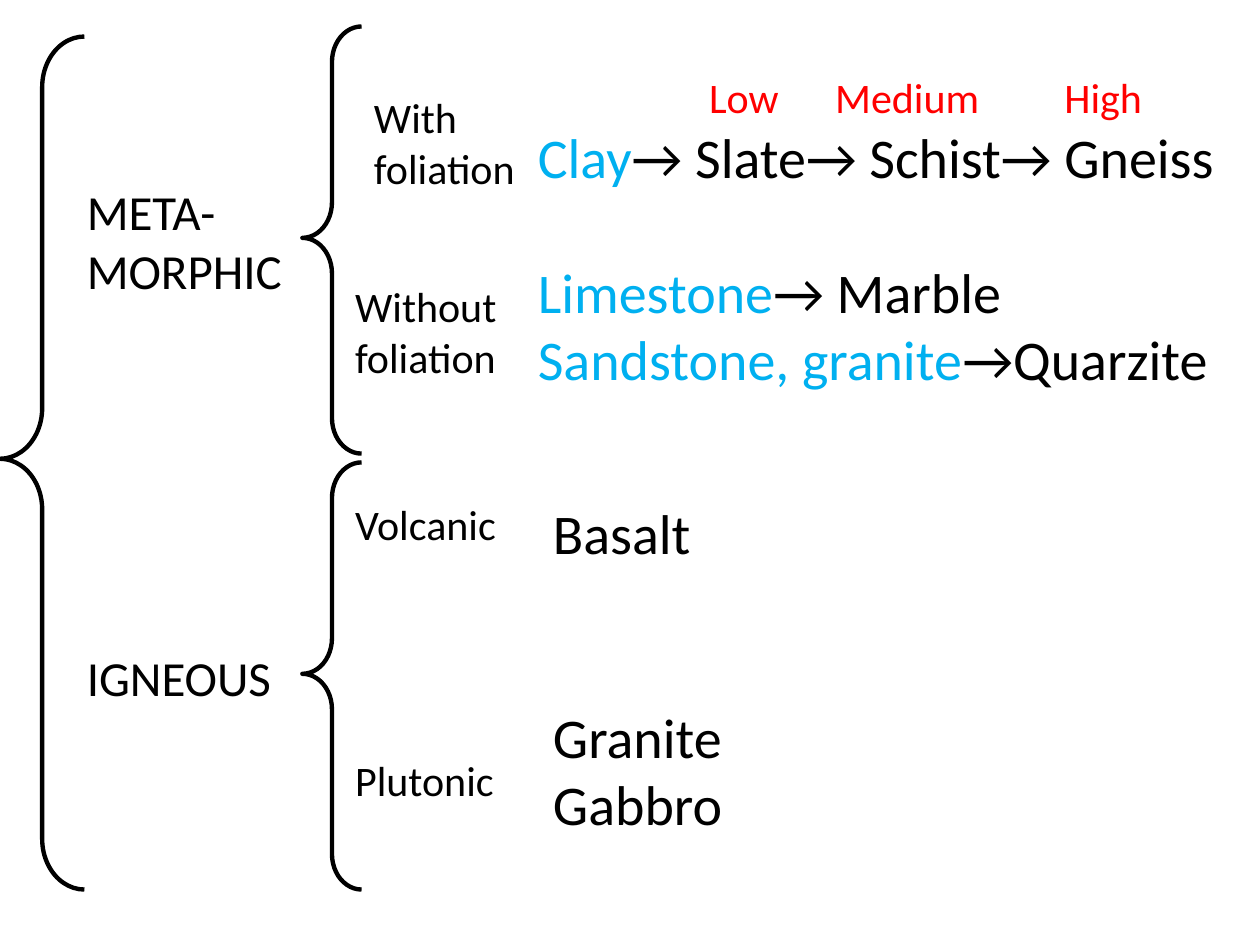
from lxml.etree import SubElement
from pptx import Presentation
from pptx.dml.color import RGBColor
from pptx.enum.shapes import MSO_SHAPE as Shape
from pptx.enum.text import MSO_AUTO_SIZE as AutoSize
from pptx.oxml.ns import qn
from pptx.util import Inches, Pt

COLORS = {"rock": "000000", "source": "00B0F0", "grade": "FF0000"}
FONT = "Calibri"
LINE = 1.22  # line height of the font as a share of its size

deck = Presentation()
deck.slide_width, deck.slide_height = Inches(10), Inches(7.5)
page = deck.slides.add_slide(deck.slide_layouts[6])


def area(left, top, width, height):
    """Turn percentages of the slide into lengths."""
    across, down = deck.slide_width / 100, deck.slide_height / 100
    return [int(left * across), int(top * down), int(width * across), int(height * down)]


def add_text(place, size, *lines):
    """Each line is (blank lines above, [(text, color), ...])."""
    box = page.shapes.add_textbox(*area(*place))
    frame = box.text_frame
    frame.word_wrap = True
    frame.auto_size = AutoSize.SHAPE_TO_FIT_TEXT
    for index, (gap, spans) in enumerate(lines):
        para = frame.paragraphs[0] if index == 0 else frame.add_paragraph()
        if gap:
            para.space_before = Pt(round(gap * size * LINE))
        for text, color in spans:
            span = para.add_run()
            span.text = text
            span.font.name = FONT
            span.font.size = Pt(size)
            span.font.color.rgb = RGBColor.from_string(COLORS[color])
    return frame


# Braces: all rocks, then one for each rock family
for place in [(0, 3.87, 6.7, 90.27), (24, 2.8, 4.7, 45.2), (24, 48.93, 4.7, 45.2)]:
    brace = page.shapes.add_shape(Shape.LEFT_BRACE, *area(*place))
    brace.adjustments[0], brace.adjustments[1] = 0.6, 0.495
    brace.shadow.inherit = False
    brace.fill.background()
    brace.line.color.rgb = RGBColor.from_string(COLORS["rock"])
    brace.line.width = Pt(2.5)

# Rock families and their metamorphic kinds
for text, size, place in [
    ("META-MORPHIC", 28, (5.9, 18.53, 18.1, 13.87)),
    ("IGNEOUS", 28, (5.9, 67.87, 18.1, 7.6)),
    ("With foliation", 24, (28.7, 9.07, 15, 12.13)),
    ("Without foliation", 24, (27.2, 29.07, 15, 12.13)),
]:
    add_text(place, size, (0, [(text, "rock")]))

# Metamorphic series, under a line of grades
series = add_text(
    (41.7, 6.93, 58.3, 35.47), 32,
    (0, [("\tLow\tMedium\tHigh", "grade")]),
    (0, [("Clay", "source"), ("→ Slate→ Schist→ Gneiss", "rock")]),
    (1, [("Limestone", "source"), ("→ Marble", "rock")]),
    (0, [("Sandstone, granite", "source"), ("→Quarzite", "rock")]),
)
grades = series.paragraphs[0]
grades.runs[0].font.size = Pt(24)
tabs = SubElement(grades._p.get_or_add_pPr(), qn("a:tabLst"))
for stop in (1.36, 2.36, 4.18):
    SubElement(tabs, qn("a:tab"), pos=str(Inches(stop)), algn="l")

# Igneous kinds and their rocks
add_text((27.2, 52.13, 15, 33.6), 24,
         (0, [("Volcanic", "rock")]), (4, [("Plutonic", "rock")]))
add_text((42.9, 52.13, 31.5, 37.2), 32,
         (0, [("Basalt", "rock")]), (2, [("Granite", "rock")]), (0, [("Gabbro", "rock")]))

deck.save("out.pptx")
